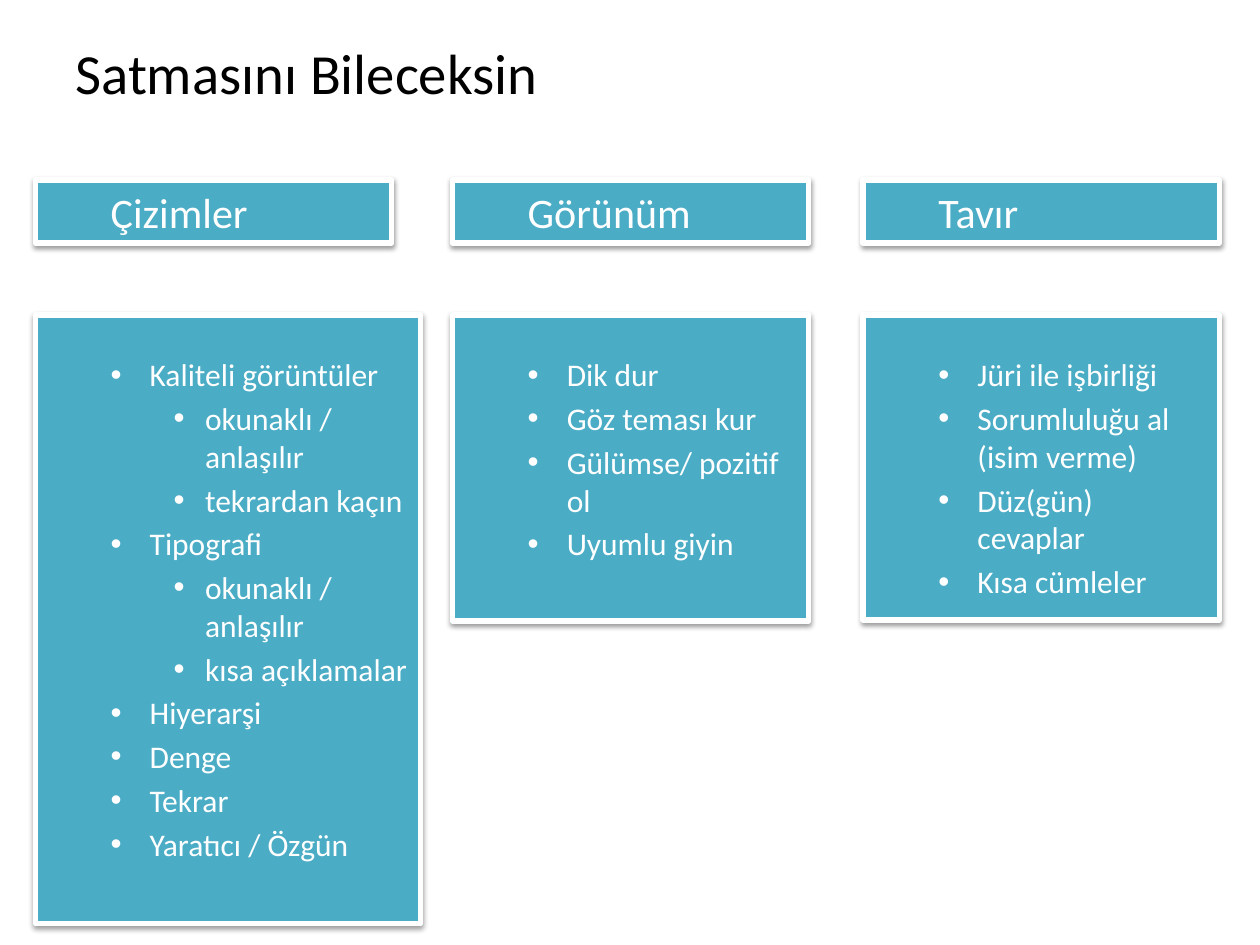
from dataclasses import dataclass

from lxml.etree import SubElement
from pptx import Presentation
from pptx.dml.color import RGBColor as Color
from pptx.enum.shapes import MSO_SHAPE as Shape
from pptx.enum.text import MSO_ANCHOR as Anchor, PP_ALIGN as Align
from pptx.oxml.ns import qn
from pptx.util import Inches, Pt


@dataclass(frozen=True)
class Theme:
    font: str = "Calibri"
    ink: str = "000000"
    panel: str = "4BACC6"
    light: str = "FFFFFF"
    title_size: float = 32.4
    header_size: float = 24
    body_size: float = 18
    body_gap: float = 3.4
    border: float = 3


THEME = Theme()
HEADER_TOP, HEADER_HEIGHT = 1.43, 0.5
BODY_TOP, BODY_INSET = 2.5, 0.32
COLUMN_WIDTH = 2.83
INDENTS = {1: (0.81, -0.31), 2: (1.25, -0.25)}
COLUMNS = [
    ("Çizimler", 0.28, 3.06, 4.83, [
        (1, "Kaliteli görüntüler"),
        (2, "okunaklı / anlaşılır"),
        (2, "tekrardan kaçın"),
        (1, "Tipografi"),
        (2, "okunaklı / anlaşılır"),
        (2, "kısa açıklamalar"),
        (1, "Hiyerarşi"),
        (1, "Denge"),
        (1, "Tekrar"),
        (1, "Yaratıcı / Özgün"),
    ]),
    ("Görünüm", 3.59, COLUMN_WIDTH, 2.43, [
        (1, "Dik dur"),
        (1, "Göz teması kur"),
        (1, "Gülümse/ pozitif ol"),
        (1, "Uyumlu giyin"),
    ]),
    ("Tavır", 6.85, COLUMN_WIDTH, 2.42, [
        (1, "Jüri ile işbirliği"),
        (1, "Sorumluluğu al (isim verme)"),
        (1, "Düz(gün) cevaplar"),
        (1, "Kısa cümleler"),
    ]),
]


def write(para, text, *, size, color=THEME.light, margin=0, indent=0,
          level=1, gap=0, bullet=None):
    para.alignment = Align.LEFT
    para.level = level - 1
    para.space_before = Pt(gap)
    span = para.add_run()
    span.text = text
    span.font.name = THEME.font
    span.font.size = Pt(size)
    span.font.color.rgb = Color.from_string(color)
    properties = para._p.get_or_add_pPr()
    properties.set("marL", str(Inches(margin)))
    properties.set("indent", str(Inches(indent)))
    if bullet:
        SubElement(properties, qn("a:buFont"), typeface="Arial")
        SubElement(properties, qn("a:buChar"), char=bullet)


def prepare_frame(box, top_inset):
    frame = box.text_frame
    frame.word_wrap = True
    frame.vertical_anchor = Anchor.TOP
    frame.margin_top = Inches(top_inset)
    return frame


def add_shadow(box):
    box.shadow.inherit = False
    effects = box._element.spPr.find(qn("a:effectLst"))
    shadow = SubElement(effects, qn("a:outerShdw"), blurRad=str(Pt(3.1)),
                        dist=str(Pt(1.6)), dir="5400000", rotWithShape="0")
    color = SubElement(shadow, qn("a:srgbClr"), val=THEME.ink)
    SubElement(color, qn("a:alpha"), val="38000")


def add_panel(page, left, top, width, height, top_inset=0.05):
    box = page.shapes.add_shape(Shape.RECTANGLE, *map(Inches, (left, top, width, height)))
    box.fill.solid()
    box.fill.fore_color.rgb = Color.from_string(THEME.panel)
    box.line.color.rgb = Color.from_string(THEME.light)
    box.line.width = Pt(THEME.border)
    add_shadow(box)
    return prepare_frame(box, top_inset)


def add_title(page, text):
    box = page.shapes.add_textbox(*map(Inches, (0.5, 0.3, 9, 1.05)))
    frame = prepare_frame(box, 0)
    write(frame.paragraphs[0], text, size=THEME.title_size, color=THEME.ink)


def add_header(page, left, text):
    frame = add_panel(page, left, HEADER_TOP, COLUMN_WIDTH, HEADER_HEIGHT)
    write(frame.paragraphs[0], text, size=THEME.header_size, margin=0.5)


def add_list(page, left, width, height, items):
    frame = add_panel(page, left, BODY_TOP, width, height, BODY_INSET)
    for index, (level, text) in enumerate(items):
        para = frame.add_paragraph() if index else frame.paragraphs[0]
        margin, indent = INDENTS[level]
        write(para, text, size=THEME.body_size, margin=margin, indent=indent,
              level=level, gap=THEME.body_gap if index else 0, bullet="•")


def main():
    deck = Presentation()
    deck.slide_width, deck.slide_height = Inches(10), Inches(7.5)
    page = deck.slides.add_slide(deck.slide_layouts[6])
    add_title(page, "Satmasını Bileceksin")
    for heading, left, width, height, items in COLUMNS:
        add_list(page, left, width, height, items)
        add_header(page, left, heading)
    deck.save("out.pptx")


if __name__ == "__main__":
    main()
